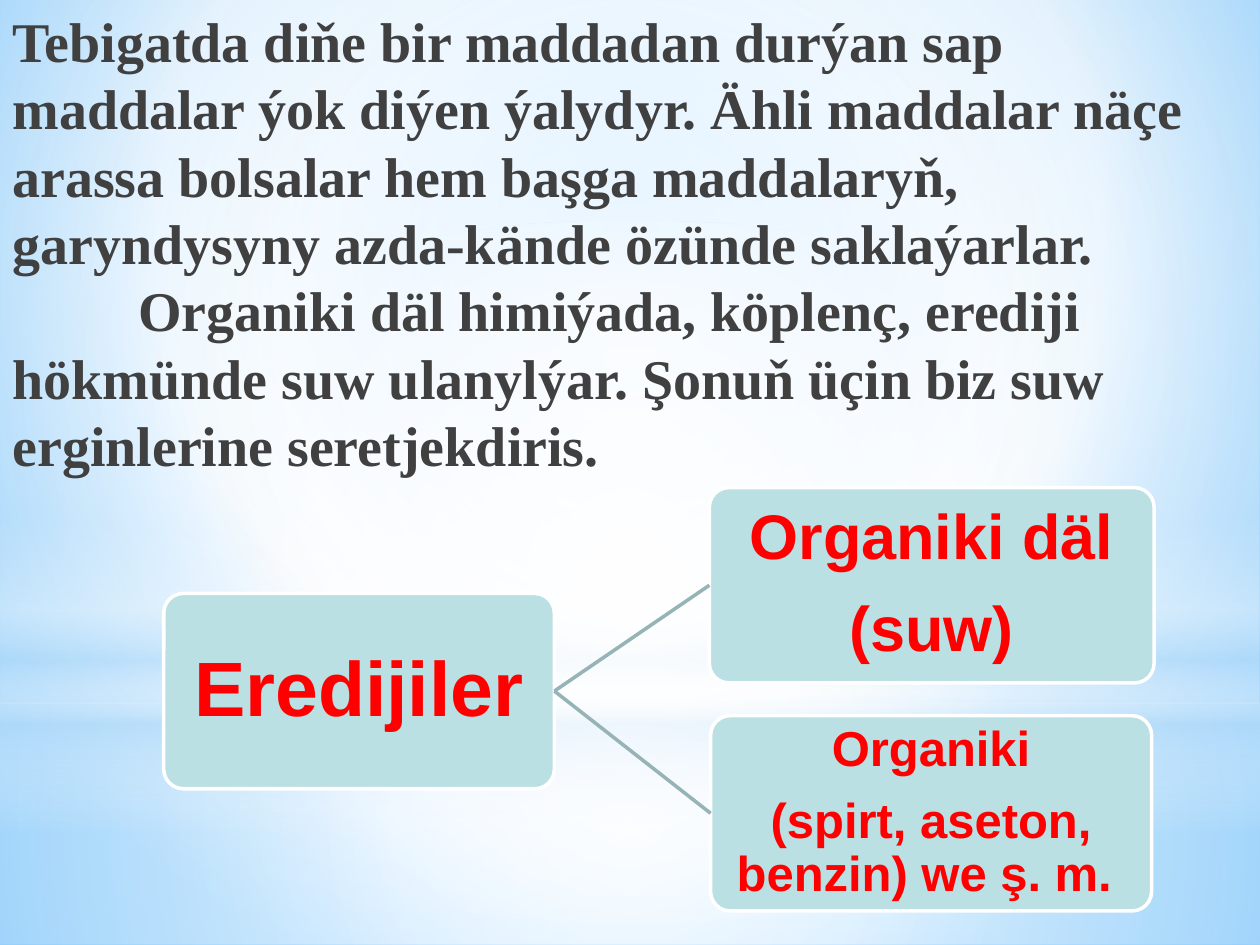
"""Build a slide on solvents: a paragraph of text above a two-branch tree."""
from pptx import Presentation
from pptx.dml.color import RGBColor
from pptx.enum.shapes import MSO_CONNECTOR, MSO_SHAPE
from pptx.enum.text import MSO_ANCHOR, PP_ALIGN
from pptx.oxml import parse_xml
from pptx.oxml.ns import nsdecls, qn
from pptx.util import Inches, Pt

RECT, OVAL, ROUND = MSO_SHAPE.RECTANGLE, MSO_SHAPE.OVAL, MSO_SHAPE.ROUNDED_RECTANGLE
LINE = MSO_CONNECTOR.STRAIGHT
TOP, MID = MSO_ANCHOR.TOP, MSO_ANCHOR.MIDDLE
LEFT, MIDDLE = PP_ALIGN.LEFT, PP_ALIGN.CENTER

RED = RGBColor(0xFF, 0x00, 0x00)
WHITE = RGBColor(0xFF, 0xFF, 0xFF)
INK = RGBColor(0x40, 0x40, 0x40)
TEAL = RGBColor(0xBB, 0xE0, 0xE3)
GREY = RGBColor(0x96, 0xB3, 0xB6)
SKY = RGBColor(0xB4, 0xDC, 0xFA)
PALE = RGBColor(0x9E, 0xD5, 0xFF)
BLUE = RGBColor(0x5B, 0xB9, 0xFF)

WIDE, HIGH = 10, 7.5
NODE = 1.55
HALF = (50, 50, 50, 50)

BODY = [
    "Tebigatda diňe bir maddadan durýan sap maddalar ýok diýen ýalydyr. "
    "Ähli maddalar näçe arassa bolsalar hem başga maddalaryň, "
    "garyndysyny azda-kände özünde saklaýarlar.",
    "Organiki däl himiýada, köplenç, erediji hökmünde suw ulanylýar. "
    "Şonuň üçin biz suw erginlerine seretjekdiris.",
]
ROOT = (1.3, 4.71, 3.1, 44, ["Eredijiler"])
LEAVES = [
    (5.63, 3.87, 3.53, 36, ["Organiki däl", "(suw)"]),
    (5.64, 5.68, 3.5, 28, ["Organiki", "(spirt, aseton, benzin) we ş. m. "]),
]
BACK = [(0, PALE, 100), (60, WHITE, 100), (100, BLUE, 100)]
LAYERS = [
    (RECT, 5.58, 1.92, [(0, WHITE, 91), (37, WHITE, 76), (100, SKY, 79)], HALF),
    (RECT, 0, 5.58, [(0, WHITE, 89), (48, WHITE, 62), (100, SKY, 79)], HALF),
    (RECT, 4.12, 2.5, [(0, WHITE, 0), (29, WHITE, 30), (45, SKY, 40),
                       (55, WHITE, 26), (65, SKY, 60), (100, WHITE, 0)], None),
    (OVAL, 1.75, 5.58, [(0, WHITE, 100), (56, WHITE, 0)], HALF),
]


def blend(fill, host, stops, focus):
    """Give a fill a gradient, round when it has a focus, else downward."""
    fill.solid()
    marks = "".join(
        f'<a:gs pos="{pos * 1000}"><a:srgbClr val="{tint}">'
        f'<a:alpha val="{alpha * 1000}"/></a:srgbClr></a:gs>'
        for pos, tint, alpha in stops)
    way = '<a:lin ang="5400000" scaled="0"/>'
    if focus:
        sides = " ".join(f'{side}="{part * 1000}"' for side, part in zip("ltrb", focus))
        way = f'<a:path path="circle"><a:fillToRect {sides}/></a:path>'
    grad = parse_xml(f'<a:gradFill {nsdecls("a")} rotWithShape="1">'
                     f'<a:gsLst>{marks}</a:gsLst>{way}</a:gradFill>')
    host.replace(host.find(qn("a:solidFill")), grad)


def write(frame, lines, face, size, tint, align, pitch, gap):
    """Fill a text frame with evenly set bold paragraphs."""
    frame.word_wrap = True
    for i, line in enumerate(lines):
        para = frame.add_paragraph() if i else frame.paragraphs[0]
        para.text = line
        para.alignment = align
        para.line_spacing = pitch
        if i:
            para.space_before = Pt(gap)
        font = para.font
        font.name, font.size, font.bold = face, Pt(size), True
        font.color.rgb = tint


def add_node(shapes, left, top, width, size, lines):
    """Draw one rounded box of the tree."""
    node = shapes.add_shape(ROUND, *map(Inches, (left, top, width, NODE)))
    node.shadow.inherit = False
    node.adjustments[0] = 0.1
    node.fill.solid()
    node.fill.fore_color.rgb = TEAL
    node.line.color.rgb = WHITE
    node.line.width = Pt(2)
    frame = node.text_frame
    frame.margin_left = frame.margin_right = Inches(0.07)
    frame.margin_top = frame.margin_bottom = Inches(0.07)
    frame.vertical_anchor = MID
    write(frame, lines, "Arial", size, RED, MIDDLE, 0.9, round(0.4 * size))
    return node


def main():
    """Build and save the slide."""
    deck = Presentation()
    deck.slide_width, deck.slide_height = Inches(WIDE), Inches(HIGH)
    slide = deck.slides.add_slide(deck.slide_layouts[6])
    shapes = slide.shapes

    fill = slide.background.fill
    blend(fill, slide.element.find(".//" + qn("p:bgPr")), BACK, (20, 10, 20, 60))
    for kind, top, height, stops, focus in LAYERS:
        layer = shapes.add_shape(kind, 0, Inches(top), Inches(WIDE), Inches(height))
        layer.shadow.inherit = False
        layer.line.fill.background()
        blend(layer.fill, layer.element.spPr, stops, focus)

    frame = shapes.add_textbox(0, 0, Inches(WIDE), Inches(HIGH)).text_frame
    frame.vertical_anchor = TOP
    frame.margin_right = Inches(0.2)
    write(frame, BODY, "Times New Roman", 32, INK, LEFT, Pt(38.5), 0)
    frame.paragraphs[1]._p.get_or_add_pPr().set("indent", str(Inches(1)))

    root = add_node(shapes, *ROOT)
    for leaf in LEAVES:
        node = add_node(shapes, *leaf)
        link = shapes.add_connector(LINE, 0, 0, 0, 0)
        link.begin_connect(root, 3)
        link.end_connect(node, 1)
        link.line.color.rgb = GREY
        link.line.width = Pt(2)
        link.element.spPr.append(parse_xml(f'<a:effectLst {nsdecls("a")}/>'))

    deck.save("out.pptx")


if __name__ == "__main__":
    main()
